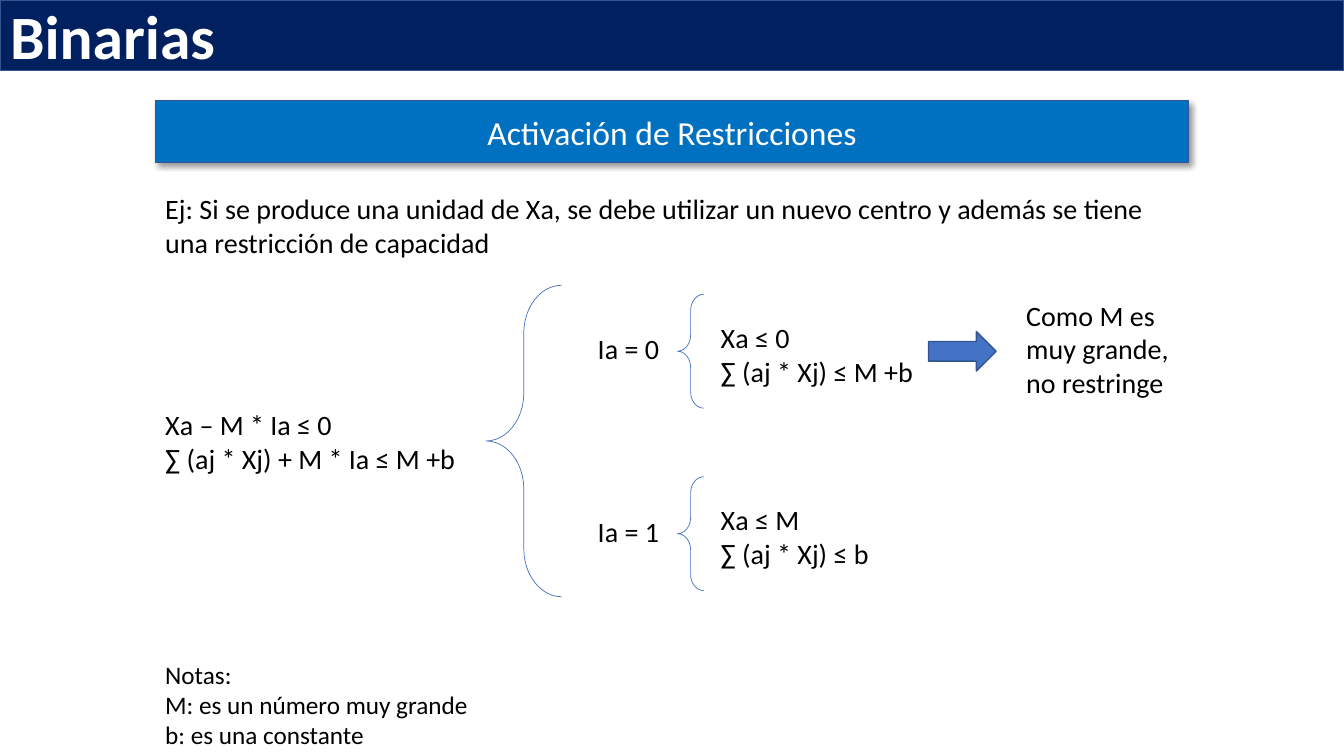
import pptx
import pptx.util
import pptx.dml.color
import pptx.enum.shapes
import pptx.enum.text
import pptx.oxml

Inches, Pt = pptx.util.Inches, pptx.util.Pt
SHAPE = pptx.enum.shapes.MSO_SHAPE
ALIGN = pptx.enum.text.PP_ALIGN
ANCHOR = pptx.enum.text.MSO_ANCHOR
COLORS = {"navy": "002060", "banner": "0070C0", "accent": "4472C4",
          "outline": "325491", "white": "FFFFFF", "black": "000000"}
WIDTH, HEIGHT = 13.33, 7.5
MARGIN = 1.54
CONTENT = WIDTH - 2 * MARGIN
CASE_TOP, CASE_PITCH = 2.92, 1.81


def write(target, lines, size, color="black", bold=False,
          align=ALIGN.LEFT, anchor=ANCHOR.MIDDLE):
    frame = target.text_frame
    frame.word_wrap = True
    frame.auto_size = pptx.enum.text.MSO_AUTO_SIZE.NONE
    frame.vertical_anchor = anchor
    frame.margin_left = frame.margin_right = Inches(0.1)
    frame.margin_top = frame.margin_bottom = Inches(0.05)
    for index, line in enumerate(lines):
        paragraph = frame.add_paragraph() if index else frame.paragraphs[0]
        paragraph.alignment = align
        run = paragraph.add_run()
        run.text = line
        run.font.name = "Calibri"
        run.font.size = Pt(size)
        run.font.bold = bold
        run.font.color.rgb = pptx.dml.color.RGBColor.from_string(COLORS[color])


def paint(shape, fill, line, weight):
    shape.shadow.inherit = False
    if fill:
        shape.fill.solid()
        shape.fill.fore_color.rgb = pptx.dml.color.RGBColor.from_string(COLORS[fill])
    else:
        shape.fill.background()
    shape.line.color.rgb = pptx.dml.color.RGBColor.from_string(COLORS[line])
    shape.line.width = Pt(weight)


deck = pptx.Presentation()
deck.slide_width, deck.slide_height = Inches(WIDTH), Inches(HEIGHT)
slide = deck.slides.add_slide(deck.slide_layouts[5])
shapes = slide.shapes

# Title bar
title = shapes.title
title.left, title.top = 0, 0
title.width, title.height = Inches(WIDTH), Inches(0.7)
title.fill.solid()
title.fill.fore_color.rgb = pptx.dml.color.RGBColor.from_string(COLORS["navy"])
title.line.color.rgb = pptx.dml.color.RGBColor.from_string(COLORS["outline"])
title.line.width = Pt(1)
write(title, ["Binarias"], 44, "white", bold=True)

# Topic banner with a soft shadow
topic = shapes.add_shape(SHAPE.RECTANGLE, Inches(MARGIN), Inches(1),
                         Inches(CONTENT), Inches(0.61))
paint(topic, "banner", "outline", 1)
write(topic, ["Activación de Restricciones"], 24, "white", align=ALIGN.CENTER)
effects = topic._element.spPr.find(pptx.oxml.ns.qn("a:effectLst"))
effects.append(pptx.oxml.parse_xml(
    f'<a:outerShdw {pptx.oxml.ns.nsdecls("a")} blurRad="{Pt(4)}" dist="{Pt(3)}" '
    'dir="2700000" algn="tl" rotWithShape="0"><a:srgbClr val="000000">'
    '<a:alpha val="40000"/></a:srgbClr></a:outerShdw>'))

# Text blocks: left, top, width, height, size, anchor, lines
blocks = [
    (MARGIN, 1.85, CONTENT, 0.77, 20, ANCHOR.TOP,
     ["Ej: Si se produce una unidad de Xa, se debe utilizar un nuevo centro "
      "y además se tiene una restricción de capacidad"]),
    (MARGIN, 4.03, 3.21, 0.7, 20, ANCHOR.MIDDLE,
     ["Xa – M * Ia ≤ 0", "∑ (aj * Xj) + M * Ia ≤ M +b"]),
    (10.08, 3.11, 1.71, 0.7, 20, ANCHOR.MIDDLE,
     ["Como M es muy grande, no restringe"]),
    (MARGIN, 6.49, 6.81, 1.01, 18, ANCHOR.TOP,
     ["Notas:", "M: es un número muy grande", "b: es una constante"]),
]
braces = [(4.82, 2.83, 0.75, 3.09, 0.637)]

# One brace, label and pair of constraints for each value of Ia
cases = [("Ia = 0", 4.05, ["Xa ≤ 0", "∑ (aj * Xj) ≤ M +b"]),
         ("Ia = 1", 2.02, ["Xa ≤ M", "∑ (aj * Xj) ≤ b"])]
for row, (label, width, constraints) in enumerate(cases):
    top = CASE_TOP + row * CASE_PITCH
    braces.append((6.72, top, 0.26, 1.13, 0.616))
    blocks.append((5.83, top + 0.19, 1.02, 0.7, 20, ANCHOR.MIDDLE, [label]))
    blocks.append((7.05, top + 0.21, width, 0.77, 20, ANCHOR.TOP, constraints))

for *box, curve in braces:
    brace = shapes.add_shape(SHAPE.LEFT_BRACE, *map(Inches, box))
    brace.adjustments[0] = curve
    brace.adjustments[1] = 0.5
    paint(brace, None, "accent", 0.5)

for *box, size, anchor, lines in blocks:
    write(shapes.add_textbox(*map(Inches, box)), lines, size, anchor=anchor)

# Arrow to the conclusion
conclusion_arrow = shapes.add_shape(SHAPE.RIGHT_ARROW, Inches(9.21), Inches(3.29),
                                    Inches(0.67), Inches(0.39))
paint(conclusion_arrow, "accent", "outline", 1)

deck.save("out.pptx")
